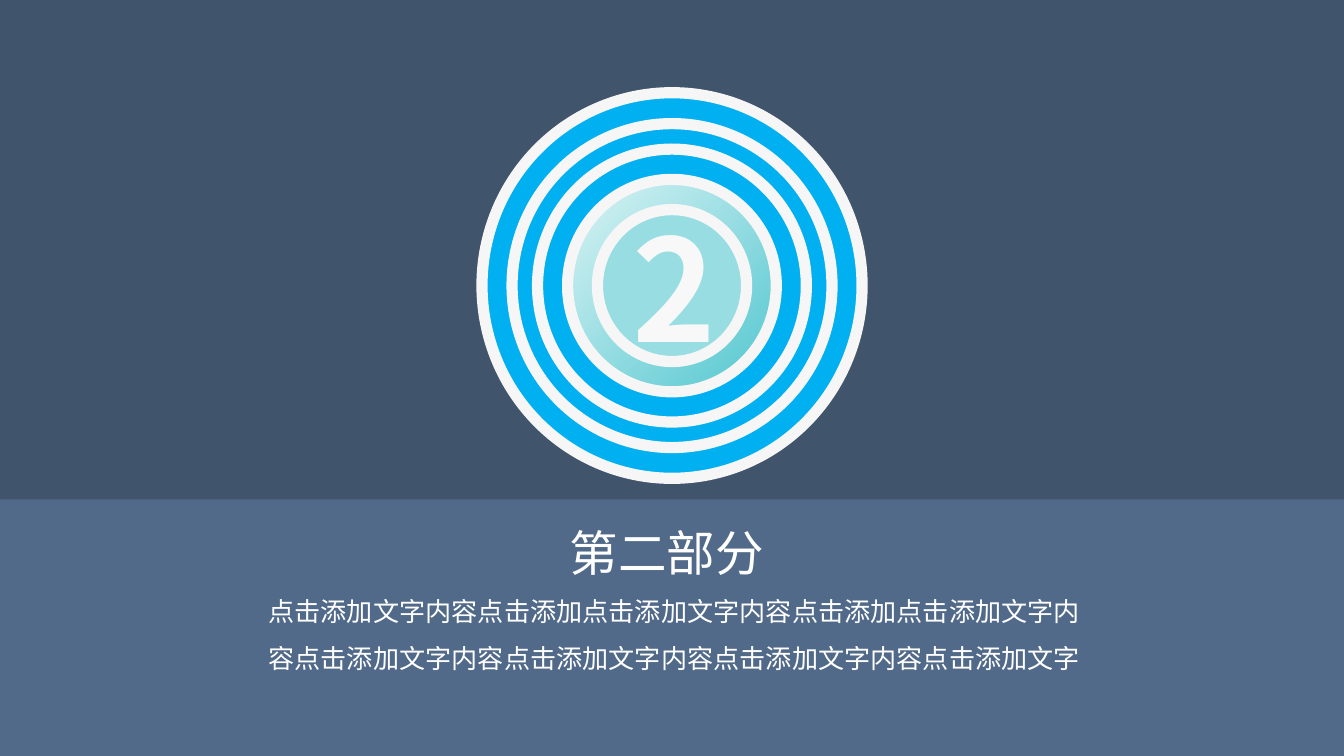
from lxml.etree import SubElement
from pptx import Presentation
from pptx.dml.color import RGBColor
from pptx.enum.shapes import MSO_SHAPE
from pptx.enum.text import MSO_ANCHOR, MSO_AUTO_SIZE, PP_ALIGN
from pptx.oxml.ns import qn
from pptx.util import Pt

FONT = "Noto Sans CJK SC"
NAVY = RGBColor(0x40, 0x54, 0x6C)
SLATE = RGBColor(0x51, 0x6A, 0x89)
BLUE = RGBColor(0x00, 0xB0, 0xF0)
TEAL = RGBColor(0x51, 0xC6, 0xCF)
AQUA = RGBColor(0x97, 0xDD, 0xE2)
PALE = RGBColor(0xDC, 0xF4, 0xF5)
RING = RGBColor(0xF6, 0xF6, 0xF6)
NUMBER = RGBColor(0xF8, 0xF8, 0xF8)
WHITE = RGBColor(0xFF, 0xFF, 0xFF)

SLIDE_W, SLIDE_H = 720, 405
BAND_TOP = 267.6
BADGE_BOX = (258.2, 49.7, 203.6, 206.6)
RING_SIZES = [(203.6, 206.6), (171.4, 173.5), (144, 146.2), (111.8, 113.8), (79.9, 81.4)]


def add_run(p, text, size, color, bold=False):
    r = p.add_run()
    r.text = text
    r.font.size = Pt(size)
    r.font.bold = bold
    r.font.color.rgb = color
    r.font.name = FONT
    SubElement(r.font._element, qn("a:ea"), typeface=FONT)


def add_filled(slide, kind, x, y, w, h, color):
    sp = slide.shapes.add_shape(kind, Pt(x), Pt(y), Pt(w), Pt(h))
    sp.shadow.inherit = False
    sp.fill.solid()
    sp.fill.fore_color.rgb = color
    sp.line.fill.background()
    return sp


def set_corner_gradient(sp, start, end):
    sp.fill.gradient()
    for stop, color in zip(sp.fill.gradient_stops, (start, end)):
        stop.color.rgb = color
    grad = sp._element.spPr.find(qn("a:gradFill"))
    grad.remove(grad.find(qn("a:lin")))
    circle = SubElement(grad, qn("a:path"), {"path": "circle"})
    SubElement(circle, qn("a:fillToRect"), l="100000", t="100000")


def add_badge(slide, box, number):
    x, y, w, h = box
    rings = []
    for ring_w, ring_h in RING_SIZES:
        sp = add_filled(slide, MSO_SHAPE.OVAL, x + (w - ring_w) / 2,
                        y + (h - ring_h) / 2, ring_w, ring_h, BLUE)
        sp.line.color.rgb = RING
        sp.line.width = Pt(6)
        rings.append(sp)
    set_corner_gradient(rings[-2], TEAL, PALE)
    center = rings[-1]
    center.fill.solid()
    center.fill.fore_color.rgb = AQUA
    tf = center.text_frame
    tf.vertical_anchor = MSO_ANCHOR.MIDDLE
    p = tf.paragraphs[0]
    p.alignment = PP_ALIGN.CENTER
    add_run(p, number, 76, NUMBER, bold=True)


def place_text(slide, sp, box, text, size, spacing, wrap):
    sp.left, sp.top, sp.width, sp.height = map(Pt, box)
    slide.shapes._spTree.append(sp._element)
    tf = sp.text_frame
    tf.word_wrap = wrap
    tf.auto_size = MSO_AUTO_SIZE.SHAPE_TO_FIT_TEXT
    tf.vertical_anchor = MSO_ANCHOR.TOP
    p = tf.paragraphs[0]
    p.alignment = PP_ALIGN.LEFT
    p.line_spacing = spacing
    p.space_before = Pt(0)
    add_run(p, text, size, WHITE)


def add_caption_band(slide, box, title, body):
    x, y, w, h = box
    add_filled(slide, MSO_SHAPE.RECTANGLE, x, y, w, h, SLATE)
    place_text(slide, slide.shapes.title, (x + 298, y + 8.8, 118.8, 38.2),
               title, 26, 1.0, False)
    place_text(slide, slide.placeholders[1], (x + 136.6, y + 39.2, 460.8, 54.7),
               body, 14, 1.5, True)


def main():
    prs = Presentation()
    prs.slide_width, prs.slide_height = Pt(SLIDE_W), Pt(SLIDE_H)
    slide = prs.slides.add_slide(prs.slide_layouts.get_by_name("Section Header"))
    slide.background.fill.solid()
    slide.background.fill.fore_color.rgb = NAVY
    add_caption_band(
        slide, (0, BAND_TOP, SLIDE_W, SLIDE_H - BAND_TOP), "第二部分",
        "点击添加文字内容点击添加点击添加文字内容点击添加点击添加文字内"
        "容点击添加文字内容点击添加文字内容点击添加文字内容点击添加文字")
    add_badge(slide, BADGE_BOX, "2")
    prs.save("out.pptx")


if __name__ == "__main__":
    main()
